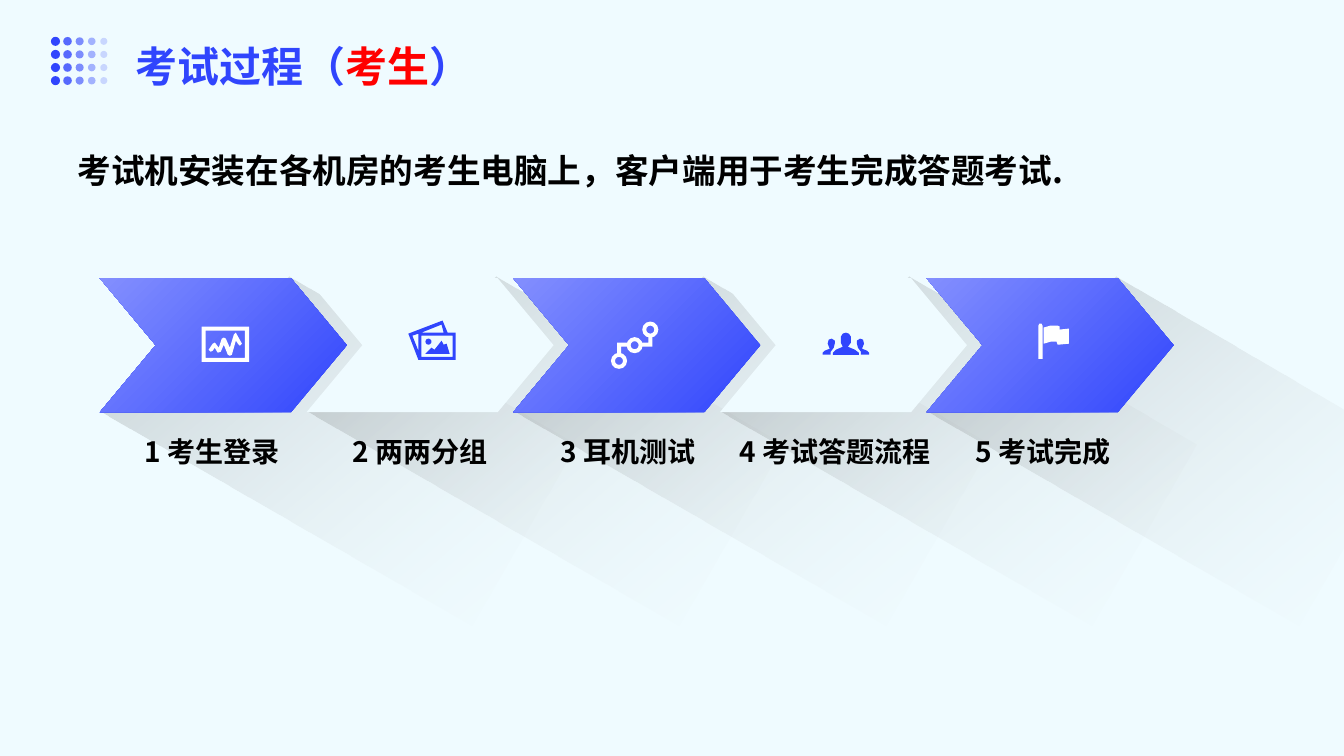
from pptx import Presentation
from pptx.dml.color import RGBColor
from pptx.enum.shapes import MSO_SHAPE
from pptx.enum.text import MSO_ANCHOR, MSO_AUTO_SIZE, PP_ALIGN
from pptx.oxml.ns import qn
from pptx.util import Inches, Pt

OVAL, CHEVRON, DONUT = MSO_SHAPE.OVAL, MSO_SHAPE.CHEVRON, MSO_SHAPE.DONUT
MIDDLE, FIXED = MSO_ANCHOR.MIDDLE, MSO_AUTO_SIZE.NONE
LEFT, CENTER = PP_ALIGN.LEFT, PP_ALIGN.CENTER

COLORS = {"blue": "3045FD", "pale": "838FFE", "sky": "EFFBFF", "red": "FF0000",
          "white": "FFFFFF", "black": "000000", "mist": "F2F2F2"}
FONT = "Noto Sans CJK SC"
STEP = 2.05
LABELS = ["1 考生登录", "2 两两分组", "3 耳机测试", "4 考试答题流程", "5 考试完成"]

# Icon outlines, in hundredths of an inch on the slide
FRAME = [[(200, 324), (200, 359), (247, 359), (247, 324)],
         [(243, 355), (204, 355), (204, 328), (243, 328)]]
PULSE = [[(207, 347), (209, 349), (211, 348), (213, 345), (216, 350), (219, 349),
          (222, 342), (226, 352), (228, 353), (230, 352), (234, 338), (236, 341),
          (238, 343), (240, 341), (235, 332), (234, 330), (232, 332), (228, 345),
          (224, 336), (222, 335), (220, 336), (217, 345), (214, 341), (213, 340),
          (211, 341)]]
PHOTOS = [[(444, 330), (439, 318), (405, 331), (415, 357), (452, 357), (452, 330)],
          [(440, 330), (418, 330), (438, 322)],
          [(409, 333), (415, 331), (415, 348)],
          [(418, 354), (418, 333), (449, 333), (449, 354)]]
HILLS = [[(443, 341), (440, 342), (438, 338), (431, 347), (428, 345), (422, 351),
          (446, 351)]]
LINKS = [[(643, 333), (643, 340), (636, 340), (636, 344), (647, 344), (647, 333)],
         [(623, 340), (612, 340), (612, 351), (616, 351), (616, 344), (623, 344)]]
LEADER = [[(826, 352), (826, 350), (829, 347), (836, 344), (834, 340), (834, 334),
           (836, 331), (839, 330), (842, 331), (844, 334), (844, 340), (841, 344),
           (848, 347), (852, 350), (852, 352)]]
MEMBER = [(824, 349), (827, 345), (828, 341), (828, 338), (825, 336), (822, 337),
          (821, 341), (823, 346), (818, 348), (816, 350), (816, 352), (824, 352)]
TEAM = [MEMBER, [(1678 - x, y) for x, y in MEMBER]]
FLAG = [[(1035, 325), (1042, 323), (1049, 323), (1051, 324), (1051, 327), (1060, 326),
         (1060, 332), (1060, 341), (1049, 342), (1048, 339), (1042, 339), (1035, 341)]]
POLE = [[(1030, 356), (1030, 323), (1031, 321), (1033, 321), (1034, 323), (1034, 356)]]
ICONS = [(FRAME, "white"), (PULSE, "white"), (PHOTOS, "blue"), (HILLS, "blue"),
         (LINKS, "white"), (LEADER, "blue"), (TEAM, "blue"), (FLAG, "white"),
         (POLE, "white")]


def rgb(name):
    return RGBColor.from_string(COLORS[name])


class Deck:
    def __init__(self):
        self.prs = Presentation()
        self.prs.slide_width, self.prs.slide_height = Inches(13.33), Inches(7.5)
        self.slide = self.prs.slides.add_slide(self.prs.slide_layouts[5])
        self.shapes = self.slide.shapes
        self.slide.background.fill.solid()
        self.slide.background.fill.fore_color.rgb = rgb("sky")

    def paint(self, shape, *names, angle=0, alphas=()):
        """Fill with one colour or a two-colour gradient; alphas are percents."""
        shape.shadow.inherit = False
        shape.line.fill.background()
        if len(names) == 1:
            shape.fill.solid()
            shape.fill.fore_color.rgb = rgb(names[0])
        else:
            shape.fill.gradient()
            shape.fill.gradient_angle = angle
            for stop, name in zip(shape.fill.gradient_stops, names):
                stop.color.rgb = rgb(name)
        tags = list(shape._element.spPr.iter(qn("a:srgbClr")))
        for tag, alpha in zip(tags, alphas):
            tag.append(tag.makeelement(qn("a:alpha"), {"val": str(alpha * 1000)}))

    def preset(self, kind, box, *names, adj=None, **look):
        shape = self.shapes.add_shape(kind, *map(Inches, box))
        if adj is not None:
            shape.adjustments[0] = adj
        self.paint(shape, *names, **look)

    def outline(self, loops, *names, turn=0, **look):
        """Draw closed loops given in hundredths of an inch."""
        pen = self.shapes.build_freeform(*loops[0][0], scale=Inches(0.01))
        for i, loop in enumerate(loops):
            if i:
                pen.move_to(*loop[0])
            pen.add_line_segments(loop[1:], close=True)
        shape = pen.convert_to_shape()
        shape.rotation = turn
        self.paint(shape, *names, **look)

    def letter(self, shape, box, runs, size, align=LEFT, space=1.2,
               pads=(0.1, 0.05, 0.1, 0.05)):
        """Place a shape and set its text from (text, colour) runs."""
        for key, value in zip(("left", "top", "width", "height"), box):
            setattr(shape, key, Inches(value))
        frame = shape.text_frame
        sides = ("margin_left", "margin_top", "margin_right", "margin_bottom")
        look = {"word_wrap": True, "auto_size": FIXED, "vertical_anchor": MIDDLE,
                **{side: Inches(pad) for side, pad in zip(sides, pads)}}
        for key, value in look.items():
            setattr(frame, key, value)
        para = frame.paragraphs[0]
        para.alignment, para.line_spacing = align, space
        for text, color in runs:
            run = para.add_run()
            run.text = text
            for key, value in {"size": Pt(size), "bold": True, "name": FONT}.items():
                setattr(run.font, key, value)
            run.font.color.rgb = rgb(color)
            props = run._r.get_or_add_rPr()
            props.append(props.makeelement(qn("a:ea"), {"typeface": FONT}))

    def title(self, box, runs, **look):
        self.letter(self.shapes.title, box, runs, **look)

    def text(self, box, text, size, **look):
        label = self.shapes.add_textbox(0, 0, 0, 0)
        self.letter(label, box, [(text, "black")], size, **look)


def main():
    deck = Deck()
    for row in range(4):
        for col in range(5):
            size = 0.09 - 0.005 * col
            box = (0.55 + 0.12 * col - size / 2, 0.41 + 0.13 * row - size / 2, size, size)
            deck.preset(OVAL, box, "blue", alphas=[100 - 20 * col])
    deck.title((1.2, 0.1, 10.94, 0.9),
               [("考试过程（", "blue"), ("考生", "red"), ("）", "blue")],
               size=30, space=1.4, pads=(0.14, 0.14, 0.06, 0.14))

    for i in reversed(range(5)):
        x, y = 125 + 100 * STEP * i, 319
        cast = [(x, y + 210), (x + 94, y), (x + 424, y + 2), (x + 424, y + 210)]
        deck.outline([cast], "black", "mist", turn=30, angle=340, alphas=(20, 0))

    for i, label in enumerate(LABELS):
        names = ["sky"] if i % 2 else ["blue", "pale"]
        deck.preset(CHEVRON, (0.99 + STEP * i, 2.76, 2.45, 1.33), *names,
                    adj=0.417, angle=135)
        deck.text((0.88 + 2.06 * i, 4.19, 2.45, 0.5), label, 20, align=CENTER)

    for loops, color in ICONS:
        deck.outline(loops, color)
    deck.preset(OVAL, (4.22, 3.36, 0.06, 0.06), "blue")
    for i in range(3):
        deck.preset(DONUT, (6.06 + 0.155 * i, 3.5 - 0.155 * i, 0.16, 0.16), "white",
                    adj=0.25)

    deck.text((0.67, 1.35, 10.36, 0.59),
              "考试机安装在各机房的考生电脑上，客户端用于考生完成答题考试.", 24)
    deck.prs.save("out.pptx")


if __name__ == "__main__":
    main()
